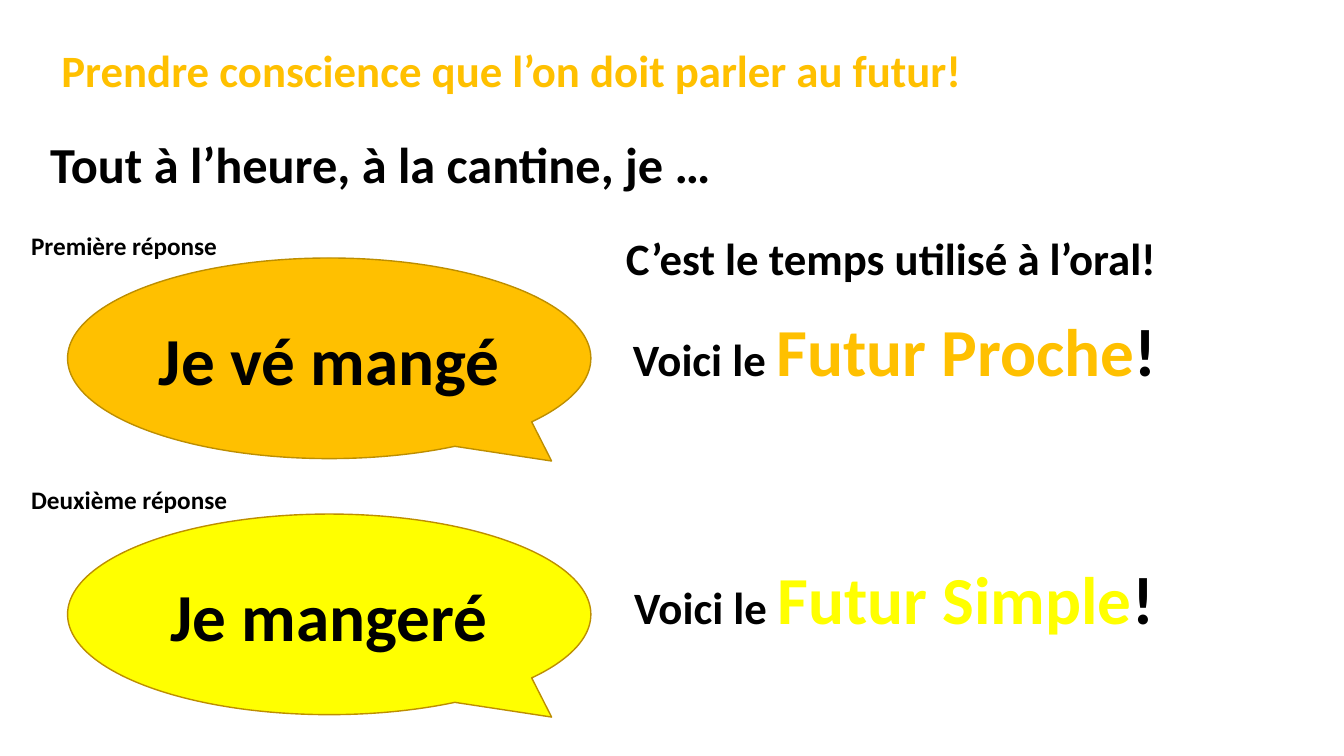
from pptx import Presentation
from pptx.dml.color import RGBColor
from pptx.enum.shapes import MSO_SHAPE
from pptx.enum.text import MSO_ANCHOR, MSO_AUTO_SIZE, PP_ALIGN
from pptx.util import Inches, Pt

BLACK = "000000"
ORANGE = "FFC000"
YELLOW = "FFFF00"
OUTLINE = "BD8E00"


def add_runs(paragraph, runs):
    """Append bold runs given as (text, size, colour)."""
    for text, size, colour in runs:
        run = paragraph.add_run()
        run.text = text
        run.font.name = "Calibri"
        run.font.size = Pt(size)
        run.font.bold = True
        run.font.color.rgb = RGBColor.from_string(colour)


def add_text(left, top, width, height, runs):
    box = slide.shapes.add_textbox(Inches(left), Inches(top), Inches(width), Inches(height))
    box.text_frame.word_wrap = False
    box.text_frame.auto_size = MSO_AUTO_SIZE.SHAPE_TO_FIT_TEXT
    add_runs(box.text_frame.paragraphs[0], runs)


presentation = Presentation()
presentation.slide_width = Inches(13.33)
presentation.slide_height = Inches(7.5)
slide = presentation.slides.add_slide(presentation.slide_layouts[6])

# Title and question
add_text(0.51, 0.37, 9.21, 0.64, [("Prendre conscience que l’on doit parler au futur!", 32, ORANGE)])
add_text(0.4, 1.27, 6.94, 0.71, [("Tout à l’heure, à la cantine, je …", 36, BLACK)])
add_text(6.11, 2.24, 5.52, 0.64, [("C’est le temps utilisé à l’oral!", 32, BLACK)])

# Each answer: label, speech bubble and name of the tense
answers = [
    ("Première réponse", 2.24, 2.06, "Je vé mangé", 2.56, "Futur Proche", 6.18, 3.02, 5.44, ORANGE),
    ("Deuxième réponse", 4.76, 2.16, "Je mangeré", 5.1, "Futur Simple", 6.19, 5.48, 5.41, YELLOW),
]
for (label, label_top, label_width, speech, bubble_top,
     tense, tense_left, tense_top, tense_width, colour) in answers:
    bubble = slide.shapes.add_shape(
        MSO_SHAPE.OVAL_CALLOUT, Inches(0.67), Inches(bubble_top), Inches(5.19), Inches(1.99))
    bubble.adjustments[0] = 0.425
    bubble.adjustments[1] = 0.512
    bubble.shadow.inherit = False
    bubble.fill.solid()
    bubble.fill.fore_color.rgb = RGBColor.from_string(colour)
    bubble.line.color.rgb = RGBColor.from_string(OUTLINE)
    bubble.line.width = Pt(1)
    bubble.text_frame.vertical_anchor = MSO_ANCHOR.MIDDLE
    paragraph = bubble.text_frame.paragraphs[0]
    paragraph.alignment = PP_ALIGN.CENTER
    add_runs(paragraph, [(speech, 48, BLACK)])

    add_text(0.21, label_top, label_width, 0.4, [(label, 18, BLACK)])
    add_text(tense_left, tense_top, tense_width, 0.91,
             [("Voici le ", 32, BLACK), (tense, 48, colour), ("!", 48, BLACK)])

presentation.save("out.pptx")
